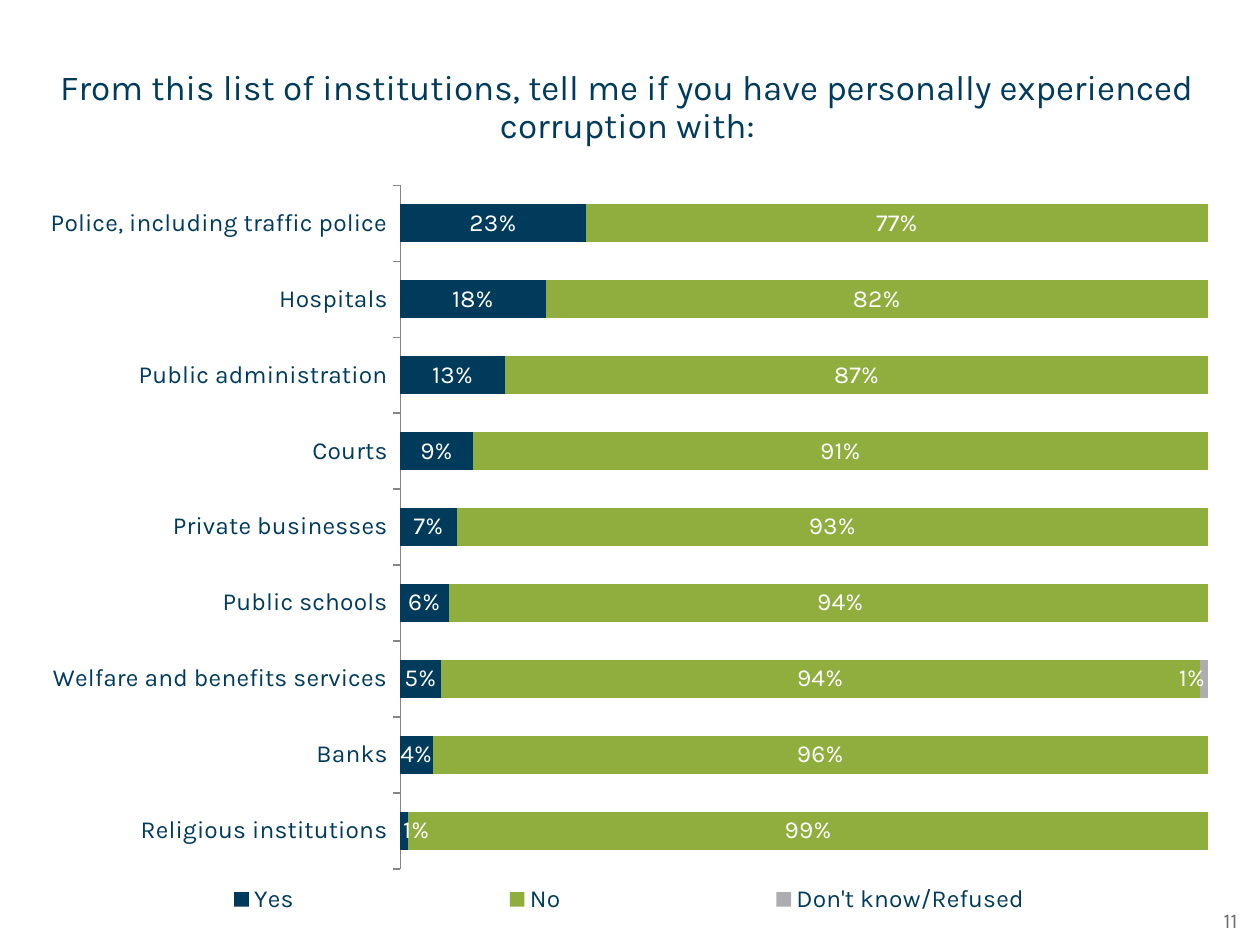
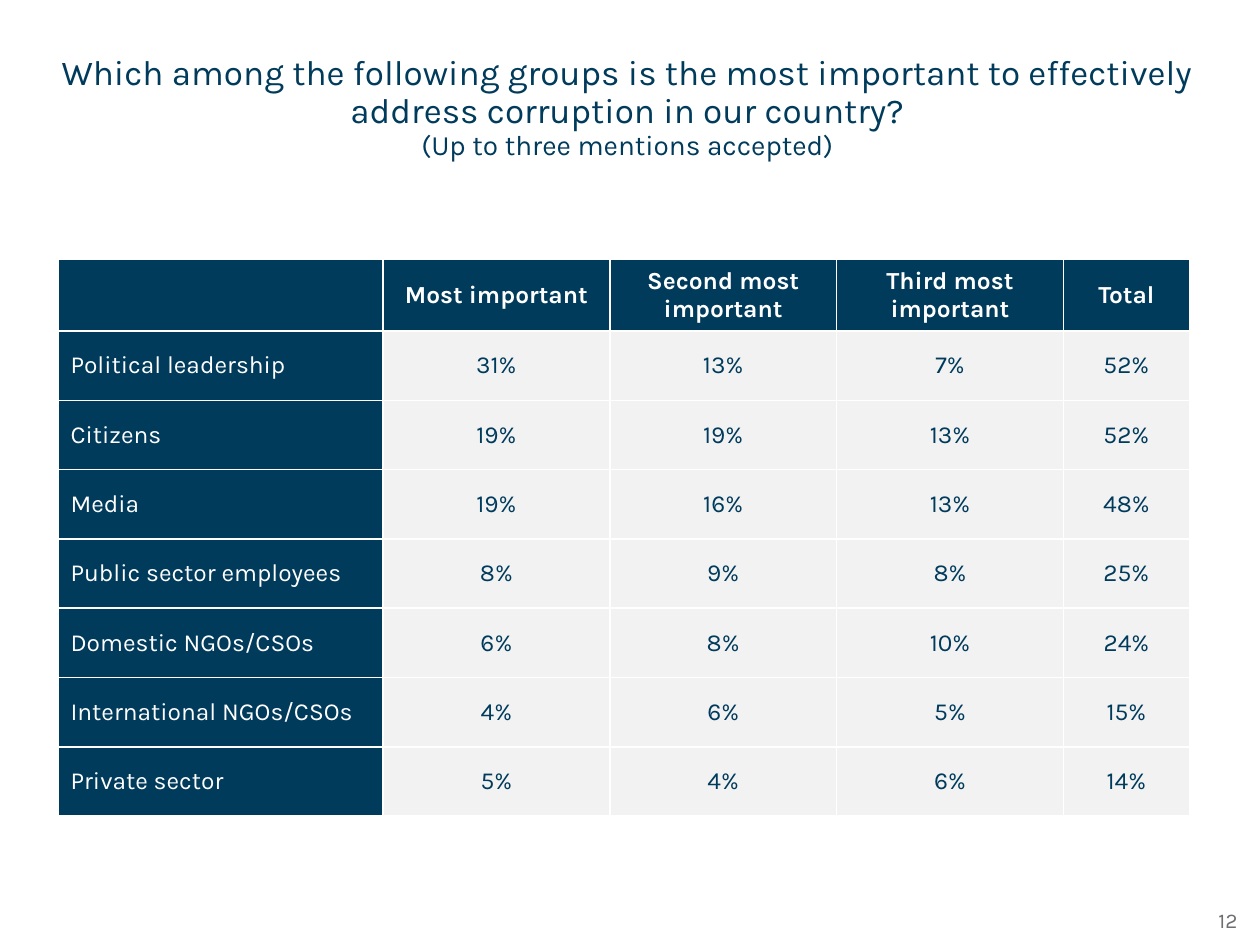
from lxml import etree
from pptx import Presentation
from pptx.chart.data import CategoryChartData
from pptx.dml.color import RGBColor
from pptx.enum.chart import XL_CHART_TYPE, XL_LABEL_POSITION, XL_LEGEND_POSITION, XL_TICK_MARK
from pptx.enum.text import MSO_ANCHOR, PP_ALIGN
from pptx.oxml import parse_xml
from pptx.oxml.ns import nsdecls, qn
from pptx.util import Inches, Pt

BAR_STACKED_100 = XL_CHART_TYPE.BAR_STACKED_100
LABEL_CENTER = XL_LABEL_POSITION.CENTER
LEGEND_BOTTOM = XL_LEGEND_POSITION.BOTTOM
TICK_OUT, TICK_NONE = XL_TICK_MARK.OUTSIDE, XL_TICK_MARK.NONE
MIDDLE = MSO_ANCHOR.MIDDLE
LEFT, CENTER, RIGHT = PP_ALIGN.LEFT, PP_ALIGN.CENTER, PP_ALIGN.RIGHT

FONT = "Karla"
NAVY, GREEN, SILVER = "003B5C", "8FAE3D", "ADADB0"
WHITE, PALE, GRAY, AXIS = "FFFFFF", "F2F2F2", "6D6E70", "868686"

EXPERIENCE_TITLE = ("From this list of institutions, tell me if you have "
                    "personally experienced corruption with:")
ANSWERS = [("Yes", NAVY), ("No", GREEN), ("Don't know/Refused", SILVER)]
EXPERIENCE = [  # institution, then one share per answer
    ("Police, including traffic police", 0.23, 0.77, 0),
    ("Hospitals", 0.18, 0.82, 0),
    ("Public administration", 0.13, 0.87, 0),
    ("Courts", 0.09, 0.91, 0),
    ("Private businesses", 0.07, 0.93, 0),
    ("Public schools", 0.06, 0.94, 0),
    ("Welfare and benefits services", 0.05, 0.94, 0.01),
    ("Banks", 0.04, 0.96, 0),
    ("Religious institutions", 0.01, 0.99, 0),
]
LABEL_SHIFTS = {  # sideways moves, as fractions of the chart width
    ("Yes", "Religious institutions"): 0.01,
    ("No", "Public schools"): 0.01,
    ("Don't know/Refused", "Welfare and benefits services"): -0.01,
}

GROUPS_TITLE = ("Which among the following groups is the most important to "
                "effectively address corruption in our country?")
GROUPS_NOTE = "(Up to three mentions accepted)"
GROUPS_HEADER = ("", "Most important", "Second most important",
                 "Third most important", "Total")
GROUPS = [
    ("Political leadership", 31, 13, 7, 52),
    ("Citizens", 19, 19, 13, 52),
    ("Media", 19, 16, 13, 48),
    ("Public sector employees", 8, 9, 8, 25),
    ("Domestic NGOs/CSOs", 6, 8, 10, 24),
    ("International NGOs/CSOs", 4, 6, 5, 15),
    ("Private sector", 5, 4, 6, 14),
]
COLUMN_WIDTHS = (2.58, 1.8, 1.8, 1.8, 1)
ROW_HEIGHT = 0.55


def rgb(color):
    return RGBColor.from_string(color)


def box(left, top, width, height):
    return [Inches(v) for v in (left, top, width, height)]


def style_font(font, size, color, bold=False):
    font.name, font.size, font.bold = FONT, Pt(size), bold
    font.color.rgb = rgb(color)


def write(p, text, size=14, color=NAVY, bold=False, align=LEFT):
    p.alignment = align
    r = p.add_run()
    r.text = text
    style_font(r.font, size, color, bold)


def add_slide(prs, title, number, note=None):
    """Add a slide with its title, optional smaller second line and page number."""
    s = prs.slides.add_slide(prs.slide_layouts[5])
    sp = s.shapes.title
    sp.left, sp.top, sp.width, sp.height = box(0.31, 0.37, 9.34, 0.98)
    tf = sp.text_frame
    tf.vertical_anchor = MIDDLE
    p = tf.paragraphs[0]
    p.line_spacing = 0.9
    write(p, title, size=20, align=CENTER)
    if note:
        p.add_line_break()
        write(p, note, size=16, align=CENTER)

    tf = s.shapes.add_textbox(*box(7.67, 7.1, 2.25, 0.4)).text_frame
    tf.word_wrap = True
    tf.vertical_anchor = MIDDLE
    write(tf.paragraphs[0], str(number), size=12, color=GRAY, align=RIGHT)
    return s


def set_layout(element, after=None, **settings):
    """Give a chart part a manual layout, placed after the given child tag."""
    for old in element.findall(qn("c:layout")):
        element.remove(old)
    values = "".join(f'<c:{name} val="{value}"/>' for name, value in settings.items())
    layout = parse_xml(f'<c:layout {nsdecls("c")}><c:manualLayout>{values}'
                       '</c:manualLayout></c:layout>')
    previous = element.find(qn(after)) if after else None
    element.insert(0 if previous is None else element.index(previous) + 1, layout)


def shift_label(series, index, shift):
    label = series.points[index].data_label
    style_font(label.font, 14, WHITE)
    label.position = LABEL_CENTER
    for element in series.data_labels._element.findall(qn("c:dLbl")):
        if element.find(qn("c:idx")).get("val") == str(index):
            set_layout(element, "c:idx", x=shift, y=0)


def add_experience_chart(s):
    institutions, *shares = zip(*reversed(EXPERIENCE))
    data = CategoryChartData(number_format="0%")
    data.categories = institutions
    for (answer, _), values in zip(ANSWERS, shares):
        data.add_series(answer, values)
    chart = s.shapes.add_chart(BAR_STACKED_100, *box(0.21, 1.35, 9.57, 6.03), data).chart
    style_font(chart.font, 14, NAVY)
    chart.has_title = False

    plot = chart.plots[0]
    plot.gap_width, plot.overlap, plot.vary_by_categories = 100, 100, False
    for series, (answer, color) in zip(plot.series, ANSWERS):
        series.format.fill.solid()
        series.format.fill.fore_color.rgb = rgb(color)
        labels = series.data_labels
        labels.show_value = True
        labels.number_format, labels.number_format_is_linked = "0%;;", False
        labels.position = LABEL_CENTER
        style_font(labels.font, 14, WHITE)
        for index, institution in enumerate(institutions):
            if (answer, institution) in LABEL_SHIFTS:
                shift_label(series, index, LABEL_SHIFTS[answer, institution])

    axis = chart.category_axis
    axis.major_tick_mark, axis.minor_tick_mark = TICK_OUT, TICK_NONE
    axis.format.line.color.rgb = rgb(AXIS)
    axis.format.line.width = Pt(0.75)
    style_font(axis.tick_labels.font, 14, NAVY)
    axis = chart.value_axis
    axis.minimum_scale, axis.maximum_scale, axis.major_unit = 0, 1, 0.1
    axis.has_major_gridlines = False
    axis.visible = False

    chart.has_legend = True
    legend = chart.legend
    legend.position, legend.include_in_layout = LEGEND_BOTTOM, False
    style_font(legend.font, 14, NAVY)
    set_layout(chart.element.find(".//" + qn("c:plotArea")), layoutTarget="inner",
               xMode="edge", yMode="edge", x=0.31, y=0.02, w=0.67, h=0.9)
    set_layout(chart.element.find(".//" + qn("c:legend")), "c:legendPos",
               xMode="edge", yMode="edge", x=0, y=0.93, w=1, h=0.06)


def add_borders(cell, color=WHITE, width=1):
    tc_pr = cell._tc.get_or_add_tcPr()
    for side in ("a:lnL", "a:lnR", "a:lnT", "a:lnB"):
        line = etree.SubElement(tc_pr, qn(side), w=str(Pt(width)))
        fill = etree.SubElement(line, qn("a:solidFill"))
        etree.SubElement(fill, qn("a:srgbClr"), val=color)


def add_groups_table(s):
    rows = [GROUPS_HEADER] + [(name, *(f"{v}%" for v in values)) for name, *values in GROUPS]
    size = sum(COLUMN_WIDTHS), ROW_HEIGHT * len(rows)
    table = s.shapes.add_table(len(rows), len(COLUMN_WIDTHS), *box(0.46, 2.06, *size)).table
    for column, width in zip(table.columns, COLUMN_WIDTHS):
        column.width = Inches(width)
    for i, row in enumerate(rows):
        table.rows[i].height = Inches(ROW_HEIGHT)
        for j, text in enumerate(row):
            cell = table.cell(i, j)
            heading = i == 0 or j == 0
            add_borders(cell)
            cell.fill.solid()
            cell.fill.fore_color.rgb = rgb(NAVY if heading else PALE)
            cell.vertical_anchor = MIDDLE
            if text:
                write(cell.text_frame.paragraphs[0], text, bold=i == 0,
                      color=WHITE if heading else NAVY, align=CENTER if j else LEFT)


def main():
    prs = Presentation()
    prs.slide_width, prs.slide_height = Inches(10), Inches(7.5)
    add_experience_chart(add_slide(prs, EXPERIENCE_TITLE, 11))
    add_groups_table(add_slide(prs, GROUPS_TITLE, 12, note=GROUPS_NOTE))
    prs.save("out.pptx")


if __name__ == "__main__":
    main()
